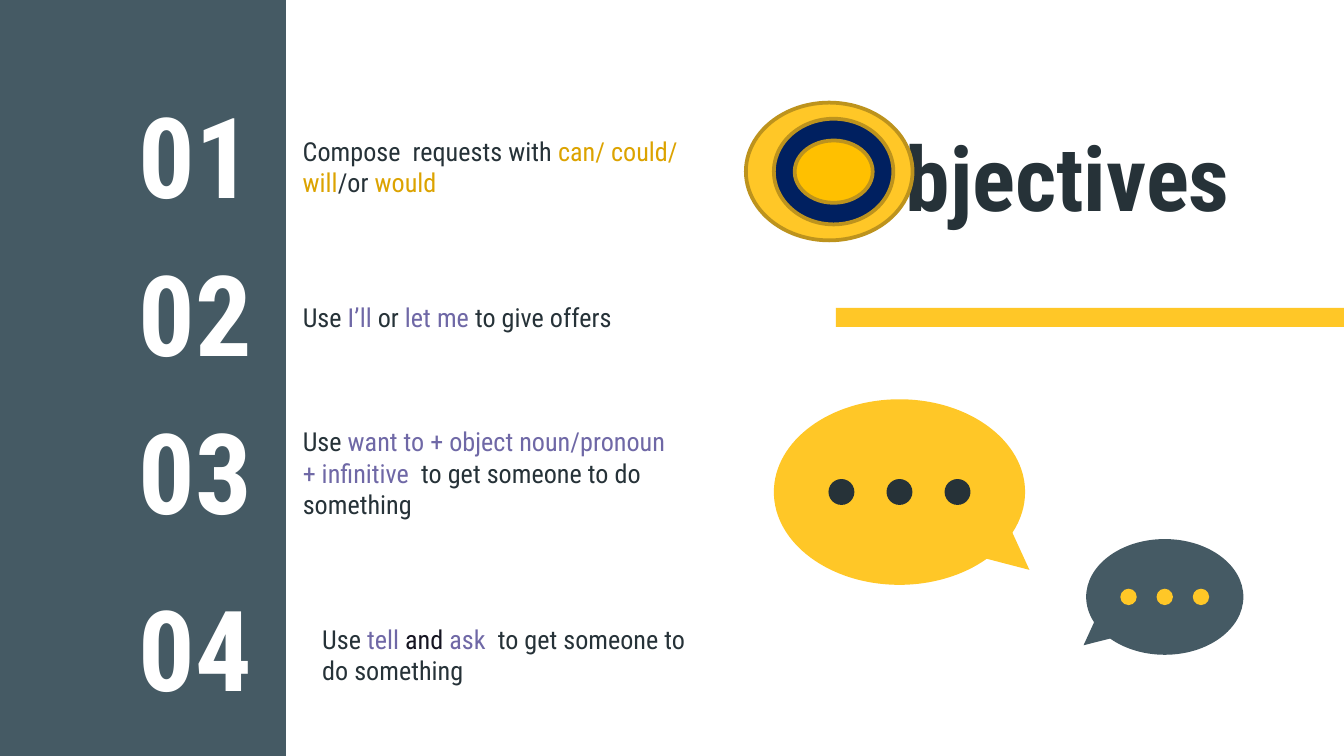
import math
from dataclasses import dataclass

import lxml.etree
import pptx
import pptx.dml.color
import pptx.enum.shapes
import pptx.enum.text
import pptx.oxml.ns
import pptx.util

Pt = pptx.util.Pt
qn = pptx.oxml.ns.qn
SHAPE = pptx.enum.shapes.MSO_SHAPE
ALIGN = pptx.enum.text.PP_ALIGN
FONT = "Roboto Condensed"
SLATE, YELLOW, INK, WHITE = "455A64", "FFC727", "263238", "FFFFFF"
PURPLE, GOLD, BLACK = "6F68A6", "DCA300", "161522"
RING = "BD931D"


@dataclass
class Objective:
    number: str
    number_top: float
    left: float
    top: float
    width: float
    runs: list[tuple[str, str]]


@dataclass
class Bubble:
    cx: float
    cy: float
    rx: float
    ry: float
    gap_start: int  # degrees, clockwise from the right
    gap_end: int
    tip: tuple[float, float]
    dot_size: float
    dot_step: float
    fill: str
    dot_fill: str


@dataclass
class Oval:
    left: float
    top: float
    width: float
    height: float
    fill: str


OBJECTIVES = [
    Objective("01", 55.4, 155.1, 75.2, 233.3, [
        ("Compose  requests with ", INK), ("can/ could/ will", GOLD),
        ("/or ", INK), ("would", GOLD)]),
    Objective("02", 140, 155.1, 155.8, 212.4, [
        ("Use ", INK), ("I’ll", PURPLE), (" or ", INK),
        ("let me ", PURPLE), ("to give offers", INK)]),
    Objective("03", 224.6, 155.1, 239.2, 212.4, [
        ("Use ", INK), ("want to + object noun/pronoun + infinitive ", PURPLE),
        (" to get someone to do something", INK)]),
    Objective("04", 319.7, 165.5, 336.6, 212.4, [
        ("Use ", INK), ("tell ", PURPLE), ("and", BLACK),
        (" ask  ", PURPLE), ("to get someone to do something", INK)]),
]
BUBBLES = [
    Bubble(481.9, 263.6, 67.3, 49.7, 26, 46, (551.5, 305.3), 13.9, 31.1, YELLOW, INK),
    Bubble(624, 319.8, 42.1, 31, 134, 154, (580.5, 345.7), 8.8, 19.4, SLATE, YELLOW),
]
LETTER_O = [
    Oval(399.6, 55, 89.3, 73.8, YELLOW),
    Oval(414.6, 63.6, 64, 56.6, "002060"),
    Oval(425.7, 75.3, 41.8, 33.4, "FFC000"),
]


def rgb(value: str) -> pptx.dml.color.RGBColor:
    return pptx.dml.color.RGBColor.from_string(value)


def paint(sp, fill: str, line: str | None = None) -> None:
    sp.shadow.inherit = False
    sp.fill.solid()
    sp.fill.fore_color.rgb = rgb(fill)
    if line:
        sp.line.color.rgb = rgb(line)
        sp.line.width = Pt(2)
    else:
        sp.line.fill.background()


def add_shape(s, kind, left: float, top: float, width: float, height: float,
              fill: str, line: str | None = None) -> None:
    sp = s.shapes.add_shape(kind, Pt(left), Pt(top), Pt(width), Pt(height))
    paint(sp, fill, line)


def add_text(s, runs: list[tuple[str, str]], *, left: float, top: float,
             width: float, height: float, size: float, bold: bool = False,
             align=ALIGN.LEFT) -> None:
    tf = s.shapes.add_textbox(Pt(left), Pt(top), Pt(width), Pt(height)).text_frame
    tf.word_wrap = True
    tf.vertical_anchor = pptx.enum.text.MSO_ANCHOR.MIDDLE
    tf.margin_left = tf.margin_right = tf.margin_top = tf.margin_bottom = Pt(7.2)
    p = tf.paragraphs[0]
    p.alignment = align
    for text, color in runs:
        r = p.add_run()
        r.text = text
        r.font.name, r.font.size, r.font.bold = FONT, Pt(size), bold
        r.font.color.rgb = rgb(color)


def add_objective(s, o: Objective) -> None:
    add_text(s, [(o.number, WHITE)], left=54.2, top=o.number_top, width=100.8,
             height=54, size=60, bold=True, align=ALIGN.CENTER)
    add_text(s, o.runs, left=o.left, top=o.top, width=o.width, height=28.1, size=14)


def arc_points(b: Bubble) -> list[tuple[float, float]]:
    """Start point, then two controls and an end for each part of the outline."""
    end = b.gap_start + 360
    stops = [b.gap_end, *(a for a in range(0, end, 90) if a > b.gap_end), end]
    angles = [math.radians(a) for a in stops]

    def at(angle: float, k: float) -> tuple[float, float]:
        return (b.cx + b.rx * (math.cos(angle) - k * math.sin(angle)),
                b.cy + b.ry * (math.sin(angle) + k * math.cos(angle)))

    points = [at(angles[0], 0)]
    for a1, a2 in zip(angles, angles[1:]):
        k = 4 / 3 * math.tan((a2 - a1) / 4)
        points += [at(a1, k), at(a2, -k), at(a2, 0)]
    return points


def add_bubble(s, b: Bubble) -> None:
    fb = s.shapes.build_freeform(Pt(b.tip[0]), Pt(b.tip[1]))
    fb.add_line_segments([(Pt(x), Pt(y)) for x, y in arc_points(b)], close=True)
    sp = fb.convert_to_shape()
    paint(sp, b.fill)

    # Join each three points after the first line into one curve
    lines = list(sp.element.iter(qn("a:lnTo")))[1:]
    for i in range(0, len(lines) - 2, 3):
        curve = lxml.etree.Element(qn("a:cubicBezTo"))
        lines[i].addprevious(curve)
        for line in lines[i:i + 3]:
            curve.append(line[0])
            line.getparent().remove(line)

    for i in (-1, 0, 1):
        add_shape(s, SHAPE.OVAL, b.cx + i * b.dot_step - b.dot_size / 2,
                  b.cy - b.dot_size / 2, b.dot_size, b.dot_size, b.dot_fill)


def main() -> None:
    prs = pptx.Presentation()
    prs.slide_width, prs.slide_height = Pt(720), Pt(405)
    s = prs.slides.add_slide(prs.slide_layouts[6])

    # Side panel and numbered objectives
    add_shape(s, SHAPE.RECTANGLE, -2, -0.7, 155.2, 406.4, SLATE)
    for objective in OBJECTIVES:
        add_objective(s, objective)

    # Heading, its ringed first letter and the bar below
    add_text(s, [("Objectives", INK)], left=382.3, top=41.8, width=283.7,
             height=105.1, size=48, bold=True, align=ALIGN.RIGHT)
    for o in LETTER_O:
        add_shape(s, SHAPE.OVAL, o.left, o.top, o.width, o.height, o.fill, RING)
    add_shape(s, SHAPE.RECTANGLE, 447.8, 164.9, 272.2, 10.3, YELLOW)

    # Speech bubbles
    for bubble in BUBBLES:
        add_bubble(s, bubble)

    prs.save("out.pptx")


if __name__ == "__main__":
    main()
